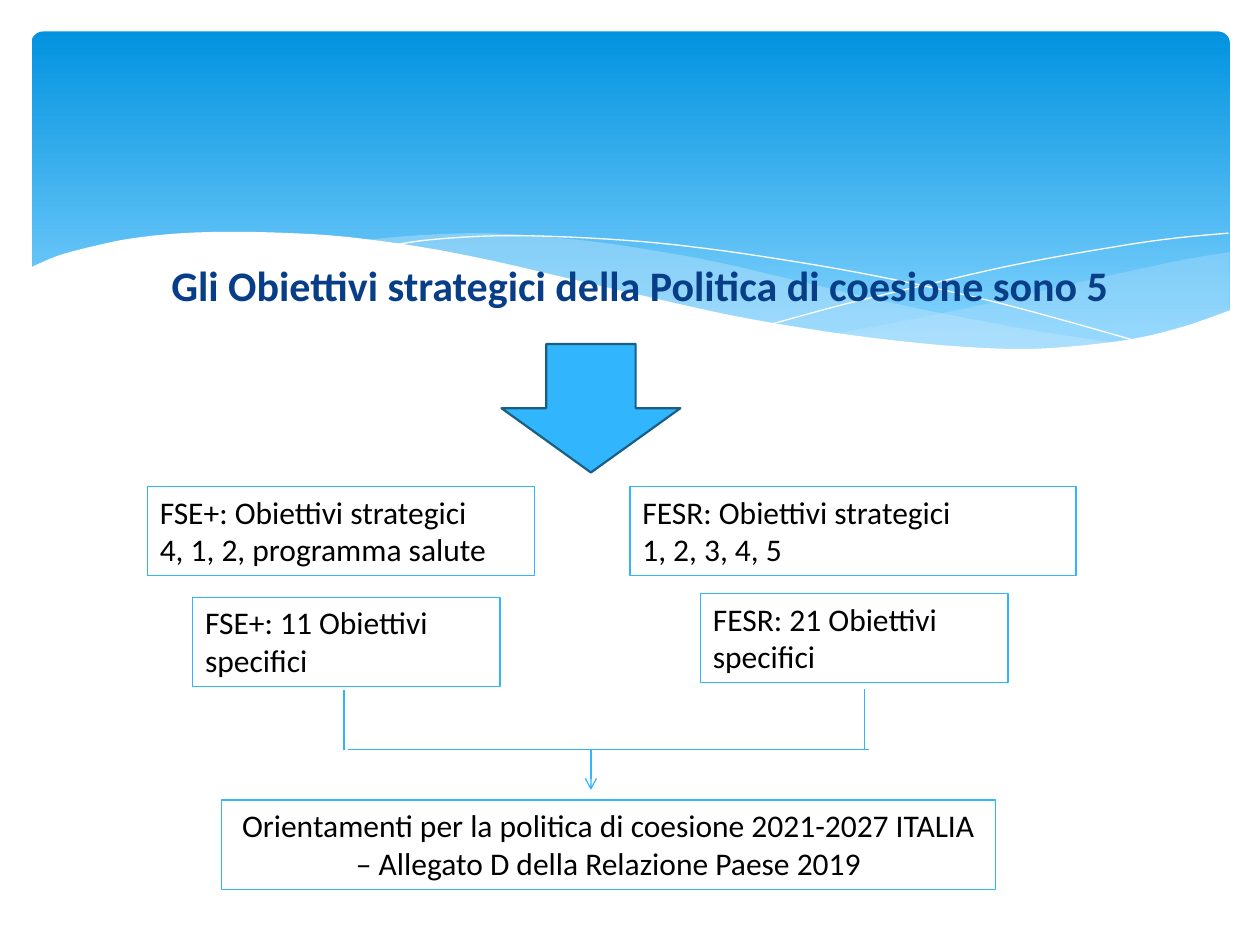
from lxml import etree
from pptx import Presentation
from pptx.dml.color import RGBColor
from pptx.enum.shapes import MSO_CONNECTOR, MSO_SHAPE
from pptx.enum.text import MSO_ANCHOR, PP_ALIGN
from pptx.oxml.ns import qn
from pptx.util import Inches, Pt

LEFT, CENTER = PP_ALIGN.LEFT, PP_ALIGN.CENTER
TOP, MIDDLE = MSO_ANCHOR.TOP, MSO_ANCHOR.MIDDLE
STRAIGHT = MSO_CONNECTOR.STRAIGHT

WHITE = RGBColor(255, 255, 255)
BLACK = RGBColor(0, 0, 0)
NAVY = RGBColor(0x07, 0x3E, 0x87)
SKY = RGBColor(0x31, 0xB6, 0xFD)
ARROW_EDGE = RGBColor(0x19, 0x5F, 0x84)
PALE = RGBColor(0xC6, 0xE7, 0xFC)
BANNER_STOPS = ((0, RGBColor(0x02, 0x93, 0xE0)), (0.9, RGBColor(0x83, 0xD3, 0xFE)))

TITLE = "Gli Obiettivi strategici della Politica di coesione sono 5"
BOX_HEIGHT = 0.71
STRATEGY_TOP, GUIDANCE_TOP, JOIN_Y = 3.86, 6.35, 5.95

# left, top, width, alignment, paragraphs
BOXES = [
    (1.53, 4.74, 2.44, LEFT, ["FSE+: 11 Obiettivi specifici"]),
    (5.56, 4.71, 2.44, LEFT, ["FESR: 21 Obiettivi specifici"]),
    (1.17, STRATEGY_TOP, 3.07, LEFT,
     ["FSE+: Obiettivi strategici", "4, 1, 2, programma salute"]),
    (5, STRATEGY_TOP, 3.54, LEFT, ["FESR: Obiettivi strategici", "1, 2, 3, 4, 5"]),
    (1.76, GUIDANCE_TOP, 6.14, CENTER,
     ["Orientamenti per la politica di coesione 2021-2027 ITALIA"
      " – Allegato D della Relazione Paese 2019"]),
]

# start, end, has arrowhead
LINKS = [
    ((2.73, 5.48), (2.73, JOIN_Y), False),
    ((6.86, 5.47), (6.86, JOIN_Y), False),
    ((2.76, JOIN_Y), (6.9, JOIN_Y), False),
    ((4.69, JOIN_Y), (4.69, 6.27), True),
]

# Each wave is a list of smooth edges, joined by straight lines
RIGHT_WAVE = [
    [(9.76, 2), (9.35, 2.07), (8.61, 2.23), (7.79, 2.42), (7.06, 2.57), (6.61, 2.65)],
    [(6.61, 2.65), (7.05, 2.71), (7.57, 2.76), (8.03, 2.78), (8.54, 2.76),
     (8.97, 2.7), (9.35, 2.62), (9.76, 2.47)],
]
LEFT_WAVE = [
    [(8.93, 2.73), (8.37, 2.65), (7.75, 2.54), (7.06, 2.4), (6.29, 2.22),
     (5.69, 2.08), (5.14, 1.98), (4.65, 1.91), (4.2, 1.87), (3.8, 1.85),
     (3.28, 1.87), (2.86, 1.91)],
    [(2.86, 1.91), (3.42, 1.99), (4.04, 2.11), (4.91, 2.32), (5.66, 2.48),
     (6.34, 2.61), (6.95, 2.7), (7.48, 2.76), (7.96, 2.78), (8.48, 2.77), (8.93, 2.73)],
]
FALLING_LINE = [[(3.09, 1.95), (3.44, 1.9), (4.01, 1.87), (4.69, 1.89), (5.33, 1.94),
                 (6.08, 2.04), (6.95, 2.19), (7.95, 2.41), (9.07, 2.72)]]
RISING_LINE = [[(6.13, 2.57), (6.72, 2.41), (7.48, 2.23), (8.06, 2.1), (8.66, 1.99),
                (9.24, 1.9), (9.75, 1.85)]]
WHITE_WAVE = [
    [(9.77, 2.46), (9.4, 2.59), (8.99, 2.69), (8.5, 2.75), (8.09, 2.77), (7.61, 2.75),
     (7.08, 2.7), (6.48, 2.62), (5.79, 2.5), (5.03, 2.33), (4.47, 2.2), (3.91, 2.07),
     (3.4, 1.97), (2.92, 1.9), (2.5, 1.86), (1.93, 1.84), (1.46, 1.85), (1.06, 1.89),
     (0.76, 1.95), (0.46, 2.03), (0.23, 2.13)],
    [(0.23, 3.29), (9.77, 3.29)],
]


def smooth(points, steps=5):
    """Return points along a Catmull-Rom curve through the given points."""
    padded = [points[0], *points, points[-1]]
    curve = [points[0]]
    for a, b, c, d in zip(padded, padded[1:], padded[2:], padded[3:]):
        for step in range(1, steps + 1):
            t = step / steps
            curve.append(tuple(
                0.5 * (2 * q + (r - p) * t + (2 * p - 5 * q + 4 * r - s) * t ** 2
                       + (3 * q - p - 3 * r + s) * t ** 3)
                for p, q, r, s in zip(a, b, c, d)))
    return curve


def paint(shape, fill=None, line=None, weight=0.75):
    shape.shadow.inherit = False
    if fill is None:
        shape.fill.background()
    else:
        shape.fill.solid()
        shape.fill.fore_color.rgb = fill
    if line is None:
        shape.line.fill.background()
    else:
        shape.line.color.rgb = line
        shape.line.width = Pt(weight)


def add_wave(slide, edges, fill=None, opacity=100, line=None):
    points = [(Inches(x), Inches(y)) for edge in edges for x, y in smooth(edge)]
    builder = slide.shapes.build_freeform(*points[0], scale=1.0)
    builder.add_line_segments(points[1:], close=fill is not None)
    wave = builder.convert_to_shape()
    paint(wave, fill, line, weight=0)
    if opacity < 100:
        color = wave.fill._xPr.find(qn("a:solidFill"))[0]
        etree.SubElement(color, qn("a:alpha"), val=str(opacity * 1000))


def write(shape, paragraphs, size=18, color=BLACK, bold=False, align=LEFT, anchor=MIDDLE):
    frame = shape.text_frame
    frame.word_wrap = True
    frame.vertical_anchor = anchor
    frame.text = "\n".join(paragraphs)
    for paragraph in frame.paragraphs:
        paragraph.alignment = align
        font = paragraph.runs[0].font
        font.name, font.size, font.bold = "Calibri", Pt(size), bold
        font.color.rgb = color


def add_preset(slide, kind, left, top, width, height, **look):
    shape = slide.shapes.add_shape(
        kind, Inches(left), Inches(top), Inches(width), Inches(height))
    paint(shape, **look)
    return shape


def add_link(slide, start, end, arrowhead):
    link = slide.shapes.add_connector(STRAIGHT, *(Inches(value) for value in start + end))
    link.line.color.rgb = SKY
    link.line.width = Pt(0.75)
    if arrowhead:
        etree.SubElement(link.line._get_or_add_ln(), qn("a:tailEnd"), type="arrow")
    etree.SubElement(link._element.spPr, qn("a:effectLst"))


def add_background(slide):
    banner = add_preset(slide, MSO_SHAPE.ROUNDED_RECTANGLE, 0.25, 0.25, 9.51, 2.7)
    banner.adjustments[0] = 0.034
    banner.fill.gradient()
    banner.fill.gradient_angle = 270
    for stop, (position, color) in zip(banner.fill.gradient_stops, BANNER_STOPS):
        stop.position = position
        stop.color.rgb = color
    add_wave(slide, RIGHT_WAVE, fill=PALE, opacity=29)
    add_wave(slide, LEFT_WAVE, fill=PALE, opacity=40)
    add_wave(slide, FALLING_LINE, line=WHITE)
    add_wave(slide, RISING_LINE, line=WHITE)
    add_wave(slide, WHITE_WAVE, fill=WHITE)


def main():
    presentation = Presentation()
    presentation.slide_width, presentation.slide_height = Inches(10), Inches(7.5)
    slide = presentation.slides.add_slide(presentation.slide_layouts[6])
    add_background(slide)
    title = slide.shapes.add_textbox(Inches(0.81), Inches(2.01), Inches(8.54), Inches(3.97))
    write(title, [TITLE], size=24, color=NAVY, bold=True, align=CENTER, anchor=TOP)
    add_preset(slide, MSO_SHAPE.DOWN_ARROW, 3.98, 2.73, 1.42, 1.02,
               fill=SKY, line=ARROW_EDGE, weight=1.25)
    for left, top, width, align, paragraphs in BOXES:
        box = add_preset(slide, MSO_SHAPE.RECTANGLE, left, top, width, BOX_HEIGHT, line=SKY)
        write(box, paragraphs, align=align, anchor=TOP)
    for link in LINKS:
        add_link(slide, *link)
    presentation.save("out.pptx")


if __name__ == "__main__":
    main()
